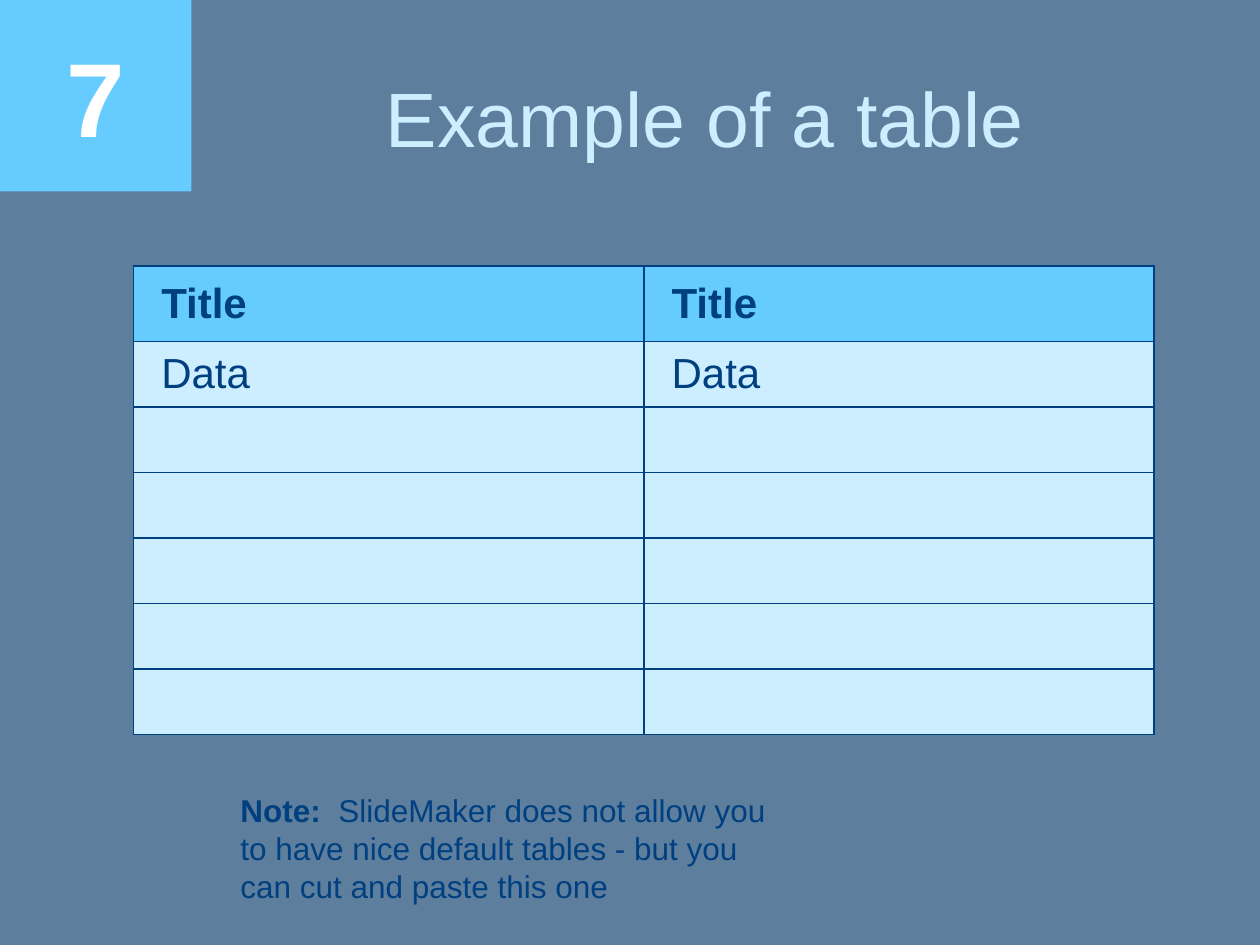
"""Build a slide with a numbered corner, a title, a two-column table and a note."""
from dataclasses import dataclass

import lxml.etree
import pptx
import pptx.dml.color
import pptx.enum.shapes
import pptx.enum.text
import pptx.oxml.ns
import pptx.util

Inches = pptx.util.Inches
Pt = pptx.util.Pt
ALIGN = pptx.enum.text.PP_ALIGN
MIDDLE = pptx.enum.text.MSO_ANCHOR.MIDDLE

SLATE, SKY, PALE, NAVY, WHITE = "5D7E9D", "66CCFF", "CCEEFF", "004080", "FFFFFF"
COLUMN_WIDTH = 4.05


@dataclass(frozen=True)
class TableRow:
    label: str
    height: float = 0.52
    fill: str = PALE
    bold: bool = False


ROWS = [TableRow("Title", 0.6, SKY, True), TableRow("Data")] + [TableRow("")] * 5


def color(value: str) -> pptx.dml.color.RGBColor:
    return pptx.dml.color.RGBColor.from_string(value)


def paint(target, value: str) -> None:
    target.fill.solid()
    target.fill.fore_color.rgb = color(value)


def style(span, size: float, value: str, bold: bool = False) -> None:
    span.font.name = "Arial"
    span.font.size = Pt(size)
    span.font.bold = bold
    span.font.color.rgb = color(value)


def write(frame, text: str, size: float, value: str, bold: bool = False, align=None) -> None:
    frame.text = text
    para = frame.paragraphs[0]
    para.alignment = align
    for span in para.runs:
        style(span, size, value, bold)


def add_borders(cell) -> None:
    properties = cell._tc.get_or_add_tcPr()
    for position, side in enumerate(("lnL", "lnR", "lnT", "lnB")):
        line = lxml.etree.Element(pptx.oxml.ns.qn(f"a:{side}"), w=str(Pt(1)))
        solid = lxml.etree.SubElement(line, pptx.oxml.ns.qn("a:solidFill"))
        lxml.etree.SubElement(solid, pptx.oxml.ns.qn("a:srgbClr"), val=NAVY)
        properties.insert(position, line)


def fill_cell(cell, row: TableRow) -> None:
    paint(cell, row.fill)
    add_borders(cell)
    cell.vertical_anchor = MIDDLE
    if row.label:
        write(cell.text_frame, row.label, 24, NAVY, row.bold)
        properties = cell.text_frame.paragraphs[0]._p.get_or_add_pPr()
        properties.set("marL", "0")
        properties.set("indent", str(Inches(0.12)))


def add_number(page, number: str) -> None:
    square = page.shapes.add_shape(
        pptx.enum.shapes.MSO_SHAPE.RECTANGLE, 0, 0, Inches(1.52), Inches(1.52))
    square.shadow.inherit = False
    paint(square, SKY)
    square.line.fill.background()
    square.text_frame.vertical_anchor = MIDDLE
    write(square.text_frame, number, 60, WHITE, True, ALIGN.CENTER)


def set_title(page, text: str) -> None:
    title = page.shapes.title
    title.left, title.top = Inches(1.69), Inches(0.3)
    title.width, title.height = Inches(7.81), Inches(1.25)
    title.text_frame.vertical_anchor = MIDDLE
    write(title.text_frame, text, 44, PALE, align=ALIGN.CENTER)


def add_grid(page, rows: list[TableRow]) -> None:
    height = sum(row.height for row in rows)
    table = page.shapes.add_table(
        len(rows), 2, Inches(1.06), Inches(2.11),
        Inches(2 * COLUMN_WIDTH), Inches(height)).table
    for column in table.columns:
        column.width = Inches(COLUMN_WIDTH)
    for row, table_row in zip(rows, table.rows):
        table_row.height = Inches(row.height)
        for cell in table_row.cells:
            fill_cell(cell, row)


def add_note(page, lead: str, text: str) -> None:
    box = page.shapes.add_textbox(Inches(1.81), Inches(6.23), Inches(4.49), Inches(1))
    box.text_frame.word_wrap = True
    box.text_frame.auto_size = pptx.enum.text.MSO_AUTO_SIZE.SHAPE_TO_FIT_TEXT
    write(box.text_frame, lead, 18, NAVY, True)
    span = box.text_frame.paragraphs[0].add_run()
    span.text = text
    style(span, 18, NAVY)


def main() -> None:
    deck = pptx.Presentation()
    deck.slide_width, deck.slide_height = Inches(10), Inches(7.5)
    page = deck.slides.add_slide(deck.slide_layouts.get_by_name("Title Only"))
    paint(page.background, SLATE)
    add_number(page, "7")
    set_title(page, "Example of a table")
    add_grid(page, ROWS)
    add_note(page, "Note:  ", "SlideMaker does not allow you to have nice default "
             "tables - but you can cut and paste this one")
    deck.save("out.pptx")


if __name__ == "__main__":
    main()
